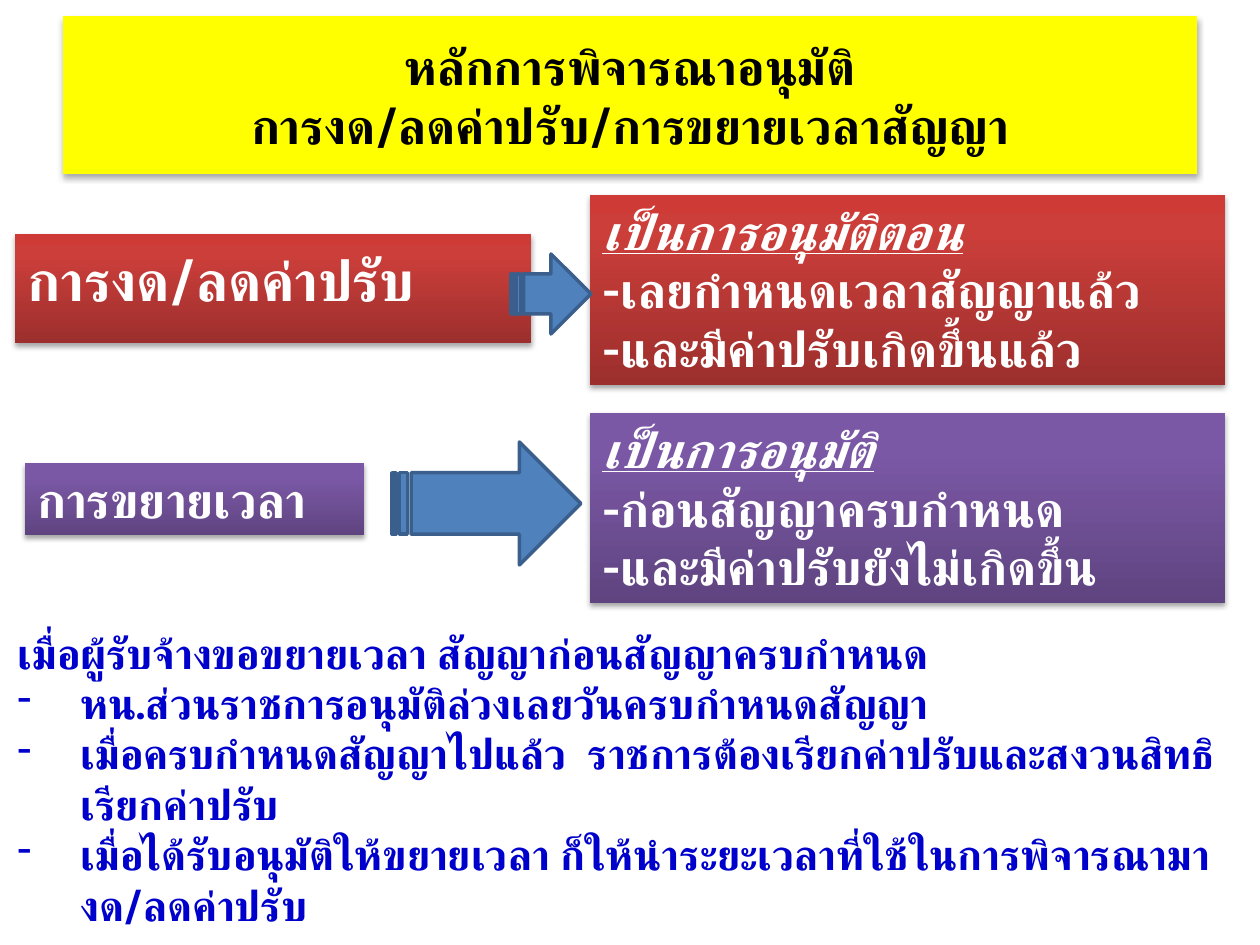
from lxml.etree import SubElement
from copy import deepcopy
from pptx import Presentation
from pptx.dml.color import RGBColor
from pptx.enum.shapes import MSO_SHAPE
from pptx.enum.text import MSO_ANCHOR, MSO_AUTO_SIZE, PP_ALIGN
from pptx.oxml.ns import qn
from pptx.util import Emu, Pt

SCALE = 914400 / 126
FACE = "Karla"
BLACK = RGBColor(0, 0, 0)
WHITE = RGBColor(255, 255, 255)
YELLOW = RGBColor(255, 255, 0)
INK = RGBColor(0, 0, 0xCC)
BLUE = RGBColor(0x4F, 0x81, 0xBD)
EDGE = RGBColor(0x3A, 0x5F, 0x8C)
RED = [RGBColor(0x9C, 0x2F, 0x2D), RGBColor(0xCB, 0x3E, 0x3A), RGBColor(0xCE, 0x3B, 0x37)]
PURPLE = [RGBColor(0x5F, 0x44, 0x80), RGBColor(0x7B, 0x58, 0xA6), RGBColor(0x7C, 0x57, 0xA8)]


def px(n):
    return Emu(round(n * SCALE))


def place(shape, box):
    shape.left, shape.top, shape.width, shape.height = map(px, box)


def shade(shape, alpha, blur, dist):
    shape.shadow.inherit = False
    effects = shape.element.spPr.find(qn("a:effectLst"))
    outer = SubElement(effects, qn("a:outerShdw"), blurRad=str(Pt(blur)),
                       dist=str(Pt(dist)), dir="5400000", rotWithShape="0")
    tone = SubElement(outer, qn("a:srgbClr"), val="000000")
    SubElement(tone, qn("a:alpha"), val=str(alpha * 1000))


def blend(shape, tones):
    fill = shape.fill
    fill.gradient()
    fill.gradient_angle = 90
    stops = shape.element.spPr.find(".//" + qn("a:gsLst"))
    stops.append(deepcopy(stops[-1]))
    for stop, spot, tone in zip(fill.gradient_stops, (0, 0.8, 1), tones):
        stop.position = spot
        stop.color.rgb = tone
    shape.line.fill.background()
    shade(shape, 35, 3.1, 1.8)


def style(para, size, color):
    font = para.font
    font.name, font.size, font.bold = FACE, Pt(size), True
    font.color.rgb = color
    props = para._p.pPr.find(qn("a:defRPr"))
    SubElement(props, qn("a:cs"), typeface=FACE)


def bullet(para, mark=None):
    props = para._p.get_or_add_pPr()
    indent = px(63) if mark else 0
    props.set("marL", str(indent))
    props.set("indent", str(-indent))
    if mark:
        SubElement(props, qn("a:buFontTx"))
        SubElement(props, qn("a:buChar"), char=mark)
    else:
        SubElement(props, qn("a:buNone"))


def write(frame, lines, size, color):
    frame.text = "\n".join(lines)
    for para in frame.paragraphs:
        para.alignment = PP_ALIGN.LEFT
        bullet(para)
        style(para, size, color)


def panel(slide, box, lines, tones, wrap=True):
    shape = slide.shapes.add_shape(MSO_SHAPE.RECTANGLE, *map(px, box))
    blend(shape, tones)
    frame = shape.text_frame
    frame.word_wrap = wrap
    frame.auto_size = MSO_AUTO_SIZE.SHAPE_TO_FIT_TEXT
    frame.vertical_anchor = MSO_ANCHOR.TOP
    write(frame, lines, 28, WHITE)
    return frame


def verdict(slide, top, lines, tones):
    head = panel(slide, (590, top, 635, 190), lines, tones).paragraphs[0].font
    head.italic = head.underline = True


def arrow(slide, box):
    shape = slide.shapes.add_shape(MSO_SHAPE.STRIPED_RIGHT_ARROW, *map(px, box))
    shape.shadow.inherit = False
    shape.fill.solid()
    shape.fill.fore_color.rgb = BLUE
    shape.line.color.rgb = EDGE
    shape.line.width = Pt(2)


def title(slide):
    shape = slide.shapes.title
    place(shape, (63, 16, 1134, 158))
    shape.fill.solid()
    shape.fill.fore_color.rgb = YELLOW
    shade(shape, 32, 3.5, 2.2)
    frame = shape.text_frame
    frame.auto_size = MSO_AUTO_SIZE.NONE
    frame.vertical_anchor = MSO_ANCHOR.MIDDLE
    para = frame.paragraphs[0]
    para.text = "หลักการพิจารณาอนุมัติ\vการงด/ลดค่าปรับ/การขยายเวลาสัญญา"
    para.alignment = PP_ALIGN.CENTER
    style(para, 28, BLACK)


def topic(slide):
    shape = slide.placeholders[1]
    place(shape, (15, 234, 516, 109))
    blend(shape, RED)
    frame = shape.text_frame
    frame.auto_size = MSO_AUTO_SIZE.NONE
    frame.margin_top = px(11)
    write(frame, ["การงด/ลดค่าปรับ"], 32, WHITE)
    frame.paragraphs[0].space_before = Pt(0)


def notes(slide):
    frame = slide.shapes.add_textbox(*map(px, (5, 621, 1245, 318))).text_frame
    frame.word_wrap = True
    frame.auto_size = MSO_AUTO_SIZE.SHAPE_TO_FIT_TEXT
    lines = [
        "เมื่อผู้รับจ้างขอขยายเวลา สัญญาก่อนสัญญาครบกำหนด",
        "หน.ส่วนราชการอนุมัติล่วงเลยวันครบกำหนดสัญญา",
        "เมื่อครบกำหนดสัญญาไปแล้ว  ราชการต้องเรียกค่าปรับและสงวนสิทธิเรียกค่าปรับ",
        "เมื่อได้รับอนุมัติให้ขยายเวลา ก็ให้นำระยะเวลาที่ใช้ในการพิจารณามางด/ลดค่าปรับ",
    ]
    frame.text = "\n".join(lines)
    for i, para in enumerate(frame.paragraphs):
        bullet(para, "-" if i else None)
        style(para, 24, INK)


def main():
    deck = Presentation()
    deck.slide_width, deck.slide_height = px(1260), px(945)
    slide = deck.slides.add_slide(deck.slide_layouts[1])
    title(slide)
    topic(slide)
    verdict(slide, 195, ["เป็นการอนุมัติตอน", "-เลยกำหนดเวลาสัญญาแล้ว",
                         "-และมีค่าปรับเกิดขึ้นแล้ว"], RED)
    panel(slide, (25, 463, 339, 72), ["การขยายเวลา"], PURPLE, False)
    verdict(slide, 413, ["เป็นการอนุมัติ", "-ก่อนสัญญาครบกำหนด",
                         "-และมีค่าปรับยังไม่เกิดขึ้น"], PURPLE)
    notes(slide)
    arrow(slide, (511, 254, 80, 80))
    arrow(slide, (392, 442, 189, 123))
    deck.save("out.pptx")


if __name__ == "__main__":
    main()
